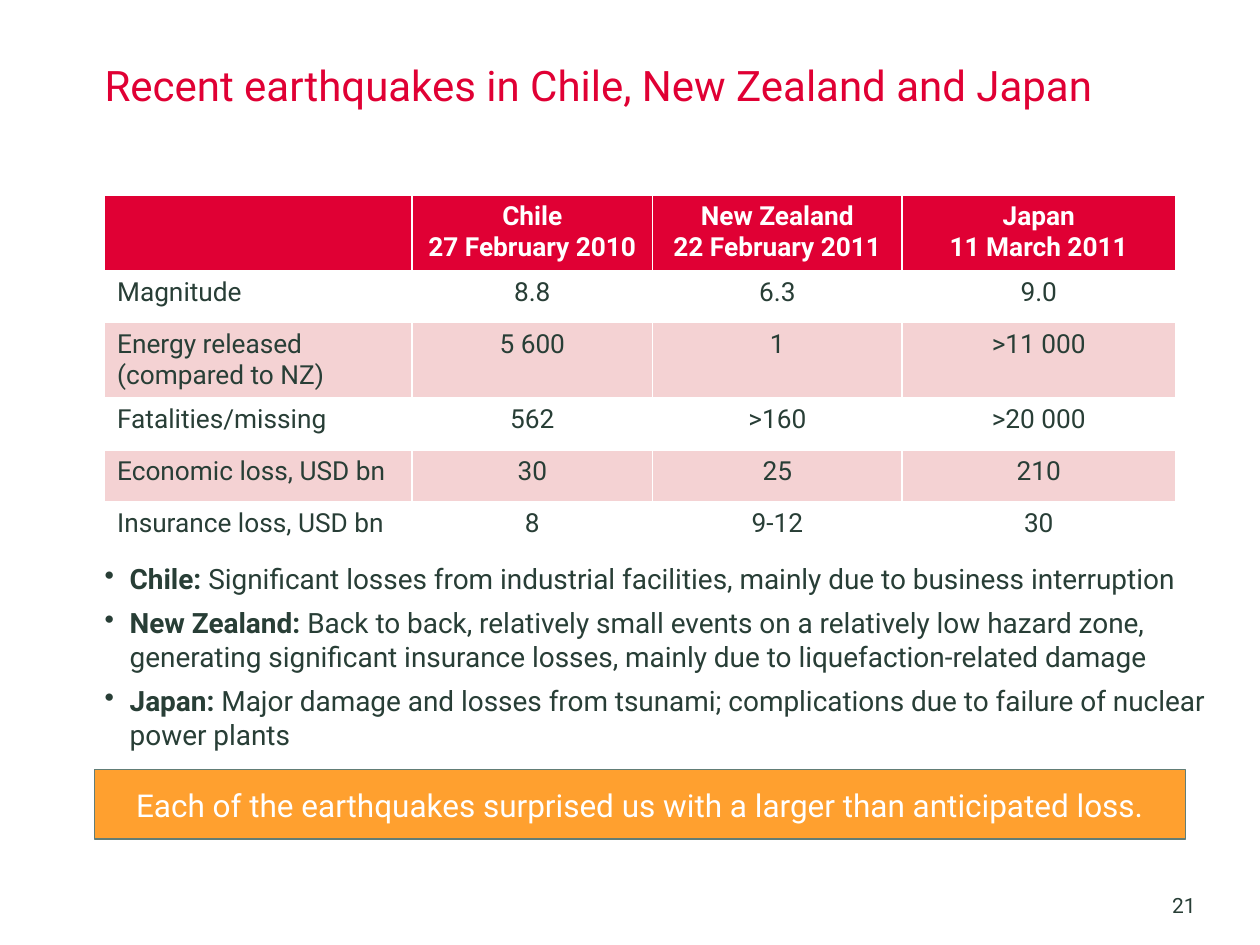
from pptx import Presentation
from pptx.dml.color import RGBColor
from pptx.enum.shapes import MSO_SHAPE
from pptx.enum.text import MSO_ANCHOR, PP_ALIGN
from pptx.oxml.ns import qn
from pptx.util import Inches, Pt

RED = RGBColor(0xE0, 0x00, 0x34)
PINK = RGBColor(0xF4, 0xD2, 0xD3)
ORANGE = RGBColor(0xFF, 0xA0, 0x2F)
GREY_GREEN = RGBColor(0x62, 0x7D, 0x77)
DARK_GREEN = RGBColor(0x28, 0x3E, 0x36)
WHITE = RGBColor(0xFF, 0xFF, 0xFF)

LEFT = Inches(0.83)
TEXT_WIDTH = Inches(8.74)
COLUMN_WIDTHS = [2.44, 1.91, 1.98, 2.17]
ROW_HEIGHT = Inches(0.41)
TABLE_ROWS = [
    ["", "Chile\n27 February 2010", "New Zealand\n22 February 2011", "Japan\n11 March 2011"],
    ["Magnitude", "8.8", "6.3", "9.0"],
    ["Energy released\n(compared to NZ)", "5 600", "1", ">11 000"],
    ["Fatalities/missing", "562", ">160", ">20 000"],
    ["Economic loss, USD bn", "30", "25", "210"],
    ["Insurance loss, USD bn", "8", "9-12", "30"],
]
COMMENTS = [
    ("Chile:", " Significant losses from industrial facilities, mainly due to business interruption"),
    ("New Zealand:", " Back to back, relatively small events on a relatively low hazard zone, "
     "generating significant insurance losses, mainly due to liquefaction-related damage"),
    ("Japan:", " Major damage and losses from tsunami; complications due to failure of nuclear power plants"),
]


def style_text(text_frame, size, color, alignment=PP_ALIGN.LEFT, bold=None):
    for paragraph in text_frame.paragraphs:
        paragraph.alignment = alignment
        for run in paragraph.runs:
            run.font.name = "Roboto"
            run.font.size = Pt(size)
            run.font.color.rgb = color
            if bold is not None:
                run.font.bold = bold


def add_text_frame(left, top, width, height):
    """Add a text box without margins and return its text frame."""
    text_frame = slide.shapes.add_textbox(left, top, width, height).text_frame
    text_frame.word_wrap = True
    text_frame.margin_left = text_frame.margin_right = 0
    text_frame.margin_top = text_frame.margin_bottom = 0
    return text_frame


presentation = Presentation()
presentation.slide_width = Inches(10)
presentation.slide_height = Inches(7.5)
slide = presentation.slides.add_slide(presentation.slide_layouts[6])

# Title
title = add_text_frame(LEFT, Inches(0.52), TEXT_WIDTH, Inches(0.95))
title.text = "Recent earthquakes in Chile, New Zealand and Japan"
title.paragraphs[0].line_spacing = 0.9
style_text(title, 24, RED)

# Earthquake table
table = slide.shapes.add_table(
    len(TABLE_ROWS), len(COLUMN_WIDTHS), LEFT, Inches(1.55),
    Inches(sum(COLUMN_WIDTHS)), ROW_HEIGHT * len(TABLE_ROWS)).table
for column, width in zip(table.columns, COLUMN_WIDTHS):
    column.width = Inches(width)
for row_index, row in enumerate(TABLE_ROWS):
    table.rows[row_index].height = ROW_HEIGHT
    is_header = row_index == 0
    for column_index, text in enumerate(row):
        cell = table.cell(row_index, column_index)
        if row_index % 2:
            cell.fill.background()
        else:
            cell.fill.solid()
            cell.fill.fore_color.rgb = RED if is_header else PINK
        cell.text_frame.text = text
        style_text(cell.text_frame, 15, WHITE if is_header else DARK_GREEN,
                   PP_ALIGN.CENTER if column_index else PP_ALIGN.LEFT, is_header)

# Comments on each earthquake
comments = add_text_frame(LEFT, Inches(4.46), TEXT_WIDTH, Inches(1.6))
for index, (country, comment) in enumerate(COMMENTS):
    paragraph = comments.add_paragraph() if index else comments.paragraphs[0]
    paragraph.text = country
    paragraph.add_run().text = comment
    if index:
        paragraph.space_before = Pt(6)
    properties = paragraph._p.get_or_add_pPr()
    properties.set("marL", str(Inches(0.2)))
    properties.set("indent", str(-Inches(0.2)))
    bullet = properties.makeelement(qn("a:buChar"), {"char": "•"})
    properties.append(bullet)
style_text(comments, 16, DARK_GREEN)
for paragraph in comments.paragraphs:
    paragraph.runs[0].font.bold = True

# Conclusion banner
banner = slide.shapes.add_shape(
    MSO_SHAPE.RECTANGLE, Inches(0.75), Inches(6.11), Inches(8.66), Inches(0.55))
banner.shadow.inherit = False
banner.fill.solid()
banner.fill.fore_color.rgb = ORANGE
banner.line.color.rgb = GREY_GREEN
banner.line.width = Pt(0.75)
banner.text_frame.text = "Each of the earthquakes surprised us with a larger than anticipated loss."
banner.text_frame.vertical_anchor = MSO_ANCHOR.MIDDLE
style_text(banner.text_frame, 18, WHITE, PP_ALIGN.CENTER)

# Page number
page_number = add_text_frame(Inches(9.25), Inches(7.08), Inches(0.24), Inches(0.2))
page_number.word_wrap = False
page_number.vertical_anchor = MSO_ANCHOR.BOTTOM
page_number.text = "21"
style_text(page_number, 12, DARK_GREEN, PP_ALIGN.RIGHT)

presentation.save("out.pptx")
